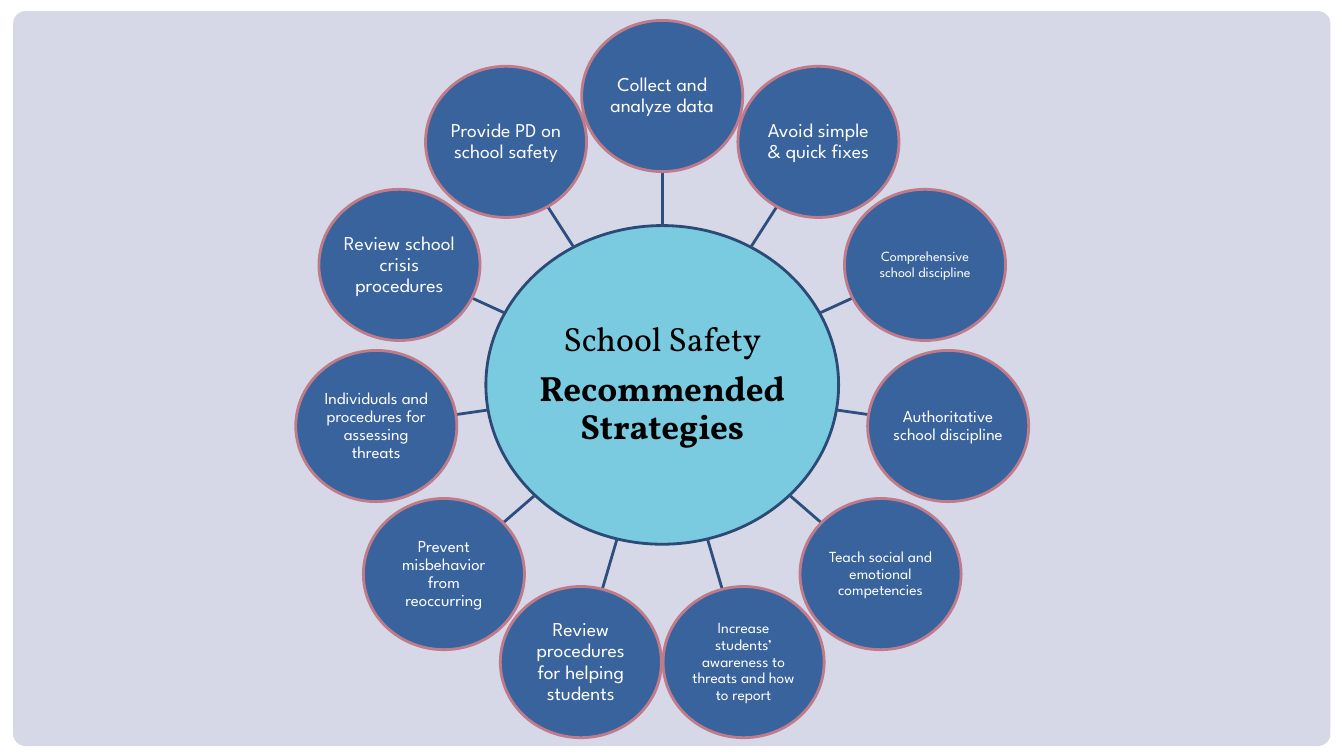
import math

from lxml import etree
from pptx import Presentation
from pptx import util as u
from pptx.dml import color
from pptx.enum import shapes, text
from pptx.oxml import ns

WIDTH, HEIGHT = 33.87, 19.05
PANEL = (0.33, 0.28, 33.2, 18.52)
WHEEL_CENTER = (16.69, 9.7)
ORBIT = 7.28
HUB_SIZE = (8.89, 8.03)
NODE_SIZE = (4.06, 3.81)
LINE_WIDTH = 2

HUB_STYLE = {"fill": "7ACBE0", "line": "2B4A76", "color": "000000", "font": "Vollkorn", "inset": 0.05}
NODE_STYLE = {"fill": "39639D", "line": "C07B8A", "color": "FFFFFF", "font": "League Spartan", "inset": 0.03}
SPOKE_COLOR = "2E4F7E"

HUB_LINES = [("School Safety", 24, False), ("Recommended Strategies", 25, True)]
STRATEGIES = [
    ("Collect and analyze data", 14),
    ("Avoid simple & quick fixes", 14),
    ("Comprehensive school discipline", 10),
    ("Authoritative school discipline", 12),
    ("Teach social and emotional competencies", 11),
    ("Increase students’ awareness to threats and how to report", 11),
    ("Review procedures for helping students", 14),
    ("Prevent misbehavior from reoccurring", 12),
    ("Individuals and procedures for assessing threats", 12),
    ("Review school crisis procedures", 14),
    ("Provide PD on school safety", 14),
]


def rgb(value):
    return color.RGBColor.from_string(value)


def add_filled(slide, kind, box, fill):
    shape = slide.shapes.add_shape(kind, *map(u.Cm, box))
    shape.shadow.inherit = False
    shape.fill.solid()
    shape.fill.fore_color.rgb = rgb(fill)
    shape.line.fill.background()
    return shape


def add_backdrop(slide, box):
    slide.background.fill.solid()
    slide.background.fill.fore_color.rgb = rgb("D7D8E7")
    add_filled(slide, shapes.MSO_SHAPE.RECTANGLE, (0, 0, WIDTH, HEIGHT), "FFFFFF")
    panel = add_filled(slide, shapes.MSO_SHAPE.ROUNDED_RECTANGLE, box, "D7D8E7")
    panel.adjustments[0] = 0.017


def add_disc(slide, center, size, lines, style):
    box = (center[0] - size[0] / 2, center[1] - size[1] / 2, *size)
    disc = add_filled(slide, shapes.MSO_SHAPE.OVAL, box, style["fill"])
    disc.line.color.rgb = rgb(style["line"])
    disc.line.width = u.Pt(LINE_WIDTH)
    frame = disc.text_frame
    frame_format = {"word_wrap": True, "vertical_anchor": text.MSO_ANCHOR.MIDDLE}
    for side in ("left", "top", "right", "bottom"):
        frame_format[f"margin_{side}"] = u.Cm(style["inset"])
    for name, value in frame_format.items():
        setattr(frame, name, value)
    for index, (wording, size_pt, bold) in enumerate(lines):
        paragraph = frame.add_paragraph() if index else frame.paragraphs[0]
        paragraph.alignment = text.PP_ALIGN.CENTER
        paragraph.line_spacing = 0.9
        if index < len(lines) - 1:
            paragraph.space_after = u.Pt(9)
        run = paragraph.add_run()
        run.text = wording
        for name, value in {"name": style["font"], "size": u.Pt(size_pt), "bold": bold}.items():
            setattr(run.font, name, value)
        run.font.color.rgb = rgb(style["color"])


def edge_distance(size, angle):
    half_width, half_height = size[0] / 2, size[1] / 2
    return 1 / math.hypot(math.sin(angle) / half_width, math.cos(angle) / half_height)


def point_at(center, distance, angle):
    return center[0] + distance * math.sin(angle), center[1] - distance * math.cos(angle)


def add_spoke(slide, center, angle):
    start = point_at(center, edge_distance(HUB_SIZE, angle), angle)
    end = point_at(center, ORBIT - edge_distance(NODE_SIZE, angle), angle)
    spoke = slide.shapes.add_connector(shapes.MSO_CONNECTOR.STRAIGHT, *map(u.Cm, start + end))
    spoke.line.color.rgb = rgb(SPOKE_COLOR)
    spoke.line.width = u.Pt(LINE_WIDTH)
    etree.SubElement(spoke.element.spPr, ns.qn("a:effectLst"))


def add_wheel(slide, center):
    add_disc(slide, center, HUB_SIZE, HUB_LINES, HUB_STYLE)
    for index, (wording, size_pt) in enumerate(STRATEGIES):
        angle = 2 * math.pi * index / len(STRATEGIES)
        add_spoke(slide, center, angle)
        node_center = point_at(center, ORBIT, angle)
        add_disc(slide, node_center, NODE_SIZE, [(wording, size_pt, False)], NODE_STYLE)


def main():
    presentation = Presentation()
    presentation.slide_width = u.Cm(WIDTH)
    presentation.slide_height = u.Cm(HEIGHT)
    slide = presentation.slides.add_slide(presentation.slide_layouts[6])
    add_backdrop(slide, PANEL)
    add_wheel(slide, WHEEL_CENTER)
    presentation.save("out.pptx")


if __name__ == "__main__":
    main()
